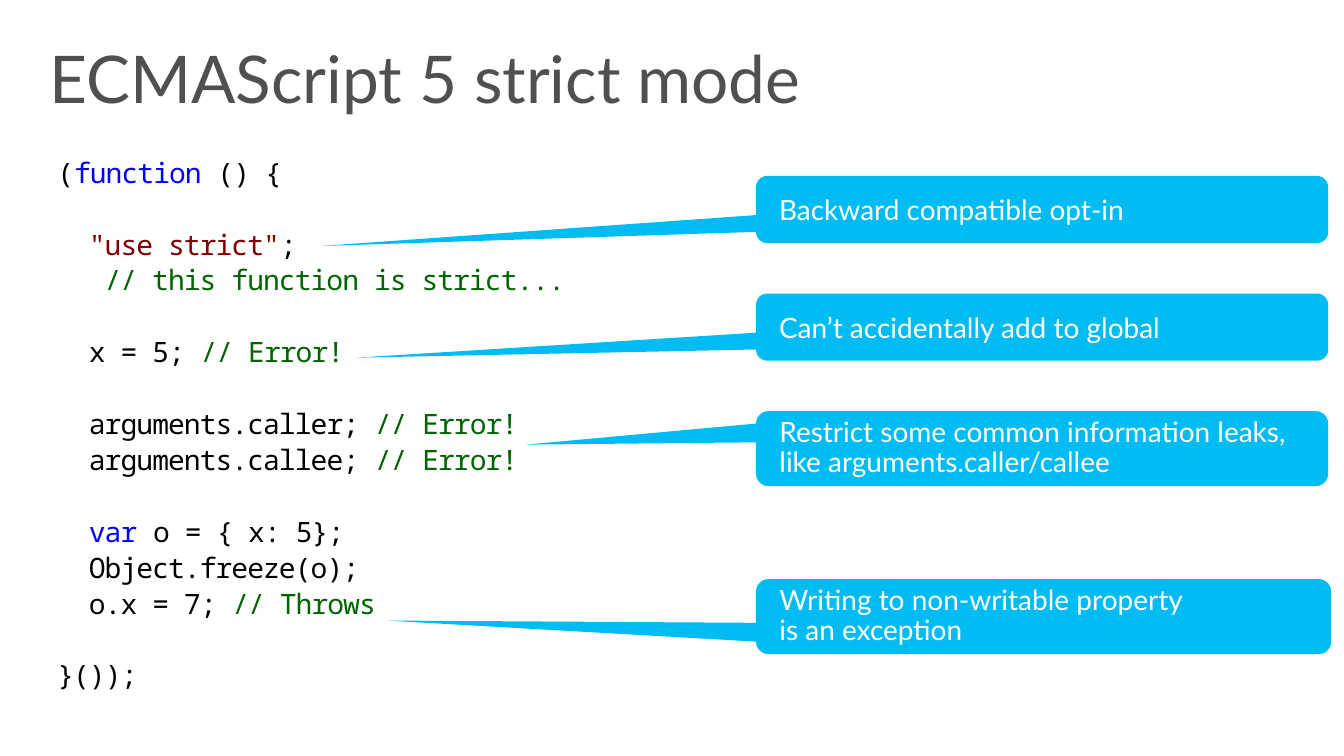
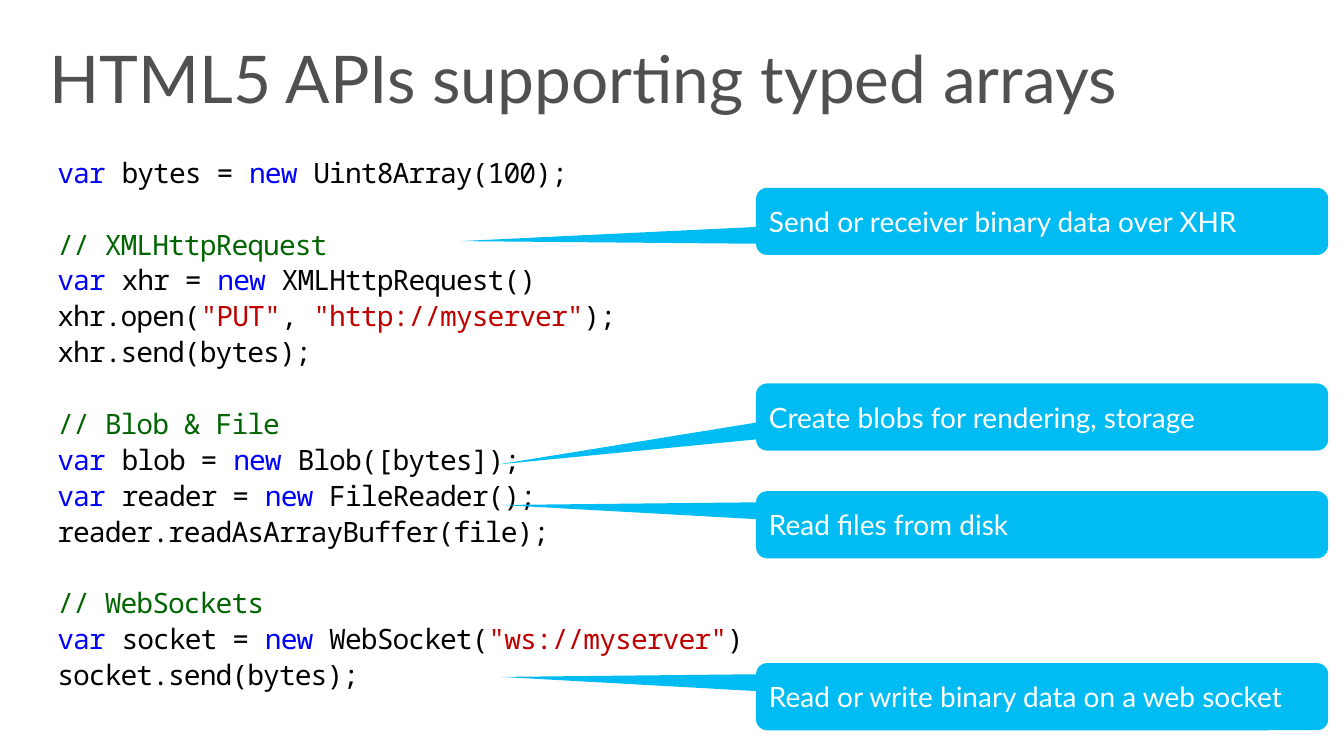
from dataclasses import dataclass

from pptx import Presentation
from pptx.dml.color import RGBColor
from pptx.enum.shapes import MSO_SHAPE
from pptx.enum.text import MSO_ANCHOR, PP_ALIGN
from pptx.util import Inches, Pt

CALLOUT = MSO_SHAPE.ROUNDED_RECTANGULAR_CALLOUT
TOP, MIDDLE = MSO_ANCHOR.TOP, MSO_ANCHOR.MIDDLE
LEFT = PP_ALIGN.LEFT

COLORS = {
    "title": "505050",
    "plain": "000000",
    "keyword": "0000FF",
    "comment": "006400",
    "dark string": "800000",
    "bright string": "C00000",
    "callout": "00BCF2",
    "white": "FFFFFF",
}
KEYWORDS = {"function", "var", "new"}
TEXT_FONT = "Lato"
CODE_FONT = "Noto Sans Mono"
TITLE_SIZE = 47.9
BODY_SIZE = 20.4
LINE_SPACING = 0.9
CODE_GAP = 4.08
CODE_PITCH = 26.18
CODE_INDENT = 0.16
CODE_TRACKING = "-70"

TITLE_BOX = (0.3, 0.33, 13, 1)
CODE_BOX = (0.58, 1.61, 12.44, 5.71)
CALLOUT_LEFT = 7.65
CALLOUT_WIDTH = 5.79
ONE_LINE = 0.68
TWO_LINES = 0.76


@dataclass
class Callout:
    text: str
    top: float
    tip: tuple
    height: float = ONE_LINE
    width: float = CALLOUT_WIDTH


STRICT_CODE = [
    "(|function| () {",
    "",
    '  |"use strict"|;',
    "   |// this function is strict...",
    "",
    "  x = 5; |// Error!",
    "",
    "  arguments.caller; |// Error!",
    "  arguments.callee; |// Error!",
    "",
    "  |var| o = { x: 5};",
    "  Object.freeze(o);",
    "  o.x = 7; |// Throws",
    "",
    "}());",
]
STRICT_CALLOUTS = [
    Callout("Backward compatible opt-in", 1.78, (3.24, 2.49)),
    Callout("Can’t accidentally add to global", 2.97, (3.6, 3.62)),
    Callout("Restrict some common information leaks, like arguments.caller/callee",
            4.16, (5.32, 4.5), TWO_LINES),
    Callout("Writing to non-writable property\nis an exception",
            5.86, (3.9, 6.28), TWO_LINES, 5.82),
]
ARRAYS_CODE = [
    "var| bytes = |new| Uint8Array(100);",
    "",
    "// XMLHttpRequest",
    "var| xhr = |new| XMLHttpRequest()",
    'xhr.open(|"PUT"|, |"http://myserver"|);',
    "xhr.send(bytes);",
    "",
    "// Blob & File",
    "var| blob = |new| Blob([bytes]);",
    "var| reader = |new| FileReader();",
    "reader.readAsArrayBuffer(file);",
    "",
    "// WebSockets",
    'var| socket = |new| WebSocket(|"ws://myserver"|)',
    "socket.send(bytes);",
]
ARRAYS_CALLOUTS = [
    Callout("Send or receiver binary data over XHR", 1.9, (4.66, 2.44)),
    Callout("Read files from disk", 4.97, (5.07, 5.11)),
    Callout("Create blobs for rendering, storage", 3.88, (5.04, 4.7)),
    Callout("Read or write binary data on a web socket", 6.71, (5.07, 6.85)),
]


def color(name):
    return RGBColor.from_string(COLORS[name])


def format_run(run, font, size, color_name):
    run.font.name = font
    run.font.size = Pt(size)
    run.font.color.rgb = color(color_name)


def set_frame(frame, insets, anchor):
    frame.word_wrap = True
    frame.vertical_anchor = anchor
    left, top, right, bottom = map(Inches, insets)
    frame.margin_left, frame.margin_right = left, right
    frame.margin_top, frame.margin_bottom = top, bottom


def add_text_box(slide, box, insets):
    frame = slide.shapes.add_textbox(*map(Inches, box)).text_frame
    set_frame(frame, insets, TOP)
    return frame


def add_title(slide, box, text):
    frame = add_text_box(slide, box, (0.2, 0.05, 0.2, 0.05))
    frame.text = text
    format_run(frame.paragraphs[0].runs[0], TEXT_FONT, TITLE_SIZE, "title")


def token_color(token, string_color):
    if token in KEYWORDS:
        return "keyword"
    if token.startswith("//"):
        return "comment"
    if token.startswith('"'):
        return string_color
    return "plain"


def add_code(slide, box, lines, string_color):
    frame = add_text_box(slide, box, (0, 0, 0, 0))
    paragraph = frame.paragraphs[0]
    gap = CODE_GAP
    for number, line in enumerate(lines):
        if not line:
            gap += CODE_PITCH
            continue
        if number:
            paragraph = frame.add_paragraph()
        paragraph.line_spacing = LINE_SPACING
        paragraph.space_before = Pt(gap)
        gap = CODE_GAP
        code = line.lstrip(" ")
        indent = (len(line) - len(code)) * CODE_INDENT
        properties = paragraph._p.get_or_add_pPr()
        properties.set("marL", str(Inches(indent)))
        properties.set("indent", "0")
        for token in filter(None, code.split("|")):
            run = paragraph.add_run()
            run.text = token
            format_run(run, CODE_FONT, BODY_SIZE, token_color(token, string_color))
            run.font._element.set("spc", CODE_TRACKING)


def add_callout(slide, callout, left_inset):
    box = (CALLOUT_LEFT, callout.top, callout.width, callout.height)
    shape = slide.shapes.add_shape(CALLOUT, *map(Inches, box))
    tip_left, tip_top = callout.tip
    shape.adjustments[0] = (tip_left - CALLOUT_LEFT) / callout.width - 0.5
    shape.adjustments[1] = (tip_top - callout.top) / callout.height - 0.5
    shape.adjustments[2] = 0.167
    shape.shadow.inherit = False
    shape.fill.solid()
    shape.fill.fore_color.rgb = color("callout")
    shape.line.fill.background()
    frame = shape.text_frame
    set_frame(frame, (left_inset, 0.05, 0.1, 0.05), MIDDLE)
    paragraph = frame.paragraphs[0]
    paragraph.text = callout.text
    paragraph.alignment = LEFT
    if callout.height == TWO_LINES:
        paragraph.line_spacing = LINE_SPACING
    for run in paragraph.runs:
        format_run(run, TEXT_FONT, BODY_SIZE, "white")


def add_code_slide(presentation, title, code, string_color, callouts, left_inset):
    slide = presentation.slides.add_slide(presentation.slide_layouts[6])
    add_title(slide, TITLE_BOX, title)
    add_code(slide, CODE_BOX, code, string_color)
    for callout in callouts:
        add_callout(slide, callout, left_inset)


def main():
    presentation = Presentation()
    presentation.slide_width = Inches(13.6)
    presentation.slide_height = Inches(7.65)
    add_code_slide(presentation, "ECMAScript 5 strict mode",
                   STRICT_CODE, "dark string", STRICT_CALLOUTS, 0.2)
    add_code_slide(presentation, "HTML5 APIs supporting typed arrays",
                   ARRAYS_CODE, "bright string", ARRAYS_CALLOUTS, 0.1)
    presentation.save("out.pptx")


if __name__ == "__main__":
    main()
